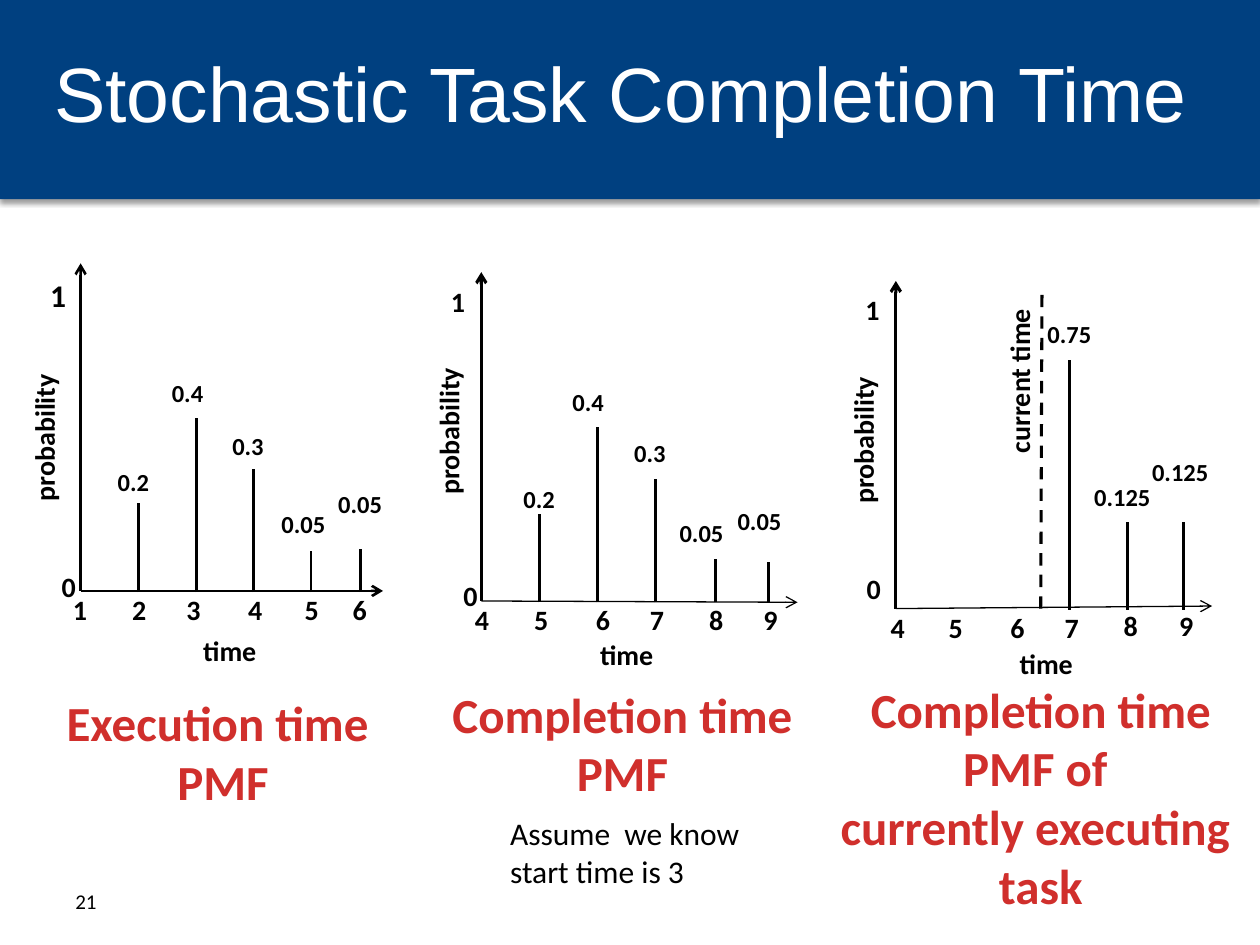
from dataclasses import dataclass

from lxml import etree
from pptx import Presentation
from pptx import util as u
from pptx.dml.color import RGBColor
from pptx.enum import dml, shapes, text
from pptx.oxml import ns

BLACK, WHITE, NAVY, RED = "000000", "FFFFFF", "004080", "D02F2C"


@dataclass
class Label:
    text: str
    center: float
    top: float


@dataclass
class Impulse:
    x: float
    top: float
    label: Label


@dataclass
class Pmf:
    origin: tuple[float, float]
    time_tip: tuple[float, float]
    probability_tip: float
    time_axis_width: float
    line_width: float
    one_size: int
    ticks: list[Label]
    impulses: list[Impulse]
    time: Label
    one: Label
    zero: Label
    probability: Label


def ticks(first: int, top: float, centers: list[float]) -> list[Label]:
    return [Label(str(n), center, top) for n, center in enumerate(centers, first)]


def color(value: str) -> RGBColor:
    return RGBColor.from_string(value)


def format_runs(frame, size: float, fill: str, font: str = "Calibri", bold: bool = False):
    for paragraph in frame.paragraphs:
        for run in paragraph.runs:
            run.font.size, run.font.name, run.font.bold = u.Pt(size), font, bold
            run.font.color.rgb = color(fill)


def add_text(slide, content: str, left: float, top: float, width: float, height: float,
             size: float, fill: str = BLACK, bold: bool = True, centered: bool = False):
    shape = slide.shapes.add_textbox(*map(u.Inches, (left, top, width, height)))
    frame = shape.text_frame
    frame.word_wrap = False
    frame.auto_size = text.MSO_AUTO_SIZE.SHAPE_TO_FIT_TEXT
    paragraph = frame.paragraphs[0]
    paragraph.text = content
    paragraph.alignment = text.PP_ALIGN.CENTER if centered else text.PP_ALIGN.LEFT
    format_runs(frame, size, fill, bold=bold)
    return shape


def add_label(slide, label: Label, width: float, size: int = 16, rotation: int = 0):
    height = {14: 0.34, 16: 0.37, 18: 0.4}[size]
    shape = add_text(slide, label.text, label.center - width / 2, label.top,
                     width, height, size)
    shape.rotation = rotation


def add_line(slide, start: tuple[float, float], end: tuple[float, float], width: float,
             arrow: bool = False, dashed: bool = False):
    line = slide.shapes.add_connector(
        shapes.MSO_CONNECTOR.STRAIGHT, *map(u.Inches, (*start, *end)))
    line.line.color.rgb = color(BLACK)
    line.line.width = u.Pt(width)
    if dashed:
        line.line.dash_style = dml.MSO_LINE.DASH
    if arrow:
        etree.SubElement(line.line._get_or_add_ln(), ns.qn("a:tailEnd"), type="arrow")
    etree.SubElement(line.element.spPr, ns.qn("a:effectLst"))


def add_pmf(slide, pmf: Pmf):
    x, base = pmf.origin
    add_line(slide, pmf.origin, pmf.time_tip, pmf.time_axis_width, arrow=True)
    add_line(slide, pmf.origin, (x, pmf.probability_tip), pmf.line_width, arrow=True)
    for impulse in pmf.impulses:
        add_line(slide, (impulse.x, base + 0.01), (impulse.x, impulse.top), pmf.line_width)
        add_label(slide, impulse.label, 0.15 + 0.1 * len(impulse.label.text), 14)
    for tick in pmf.ticks:
        add_label(slide, tick, 0.32)
    add_label(slide, pmf.time, 0.63)
    add_label(slide, pmf.one, 0.32, pmf.one_size)
    add_label(slide, pmf.zero, 0.32)
    add_label(slide, pmf.probability, 1.22, rotation=270)


def add_band(slide):
    band = slide.shapes.add_shape(
        shapes.MSO_SHAPE.RECTANGLE, 0, 0, u.Inches(10), u.Inches(1.58))
    band.shadow.inherit = False
    band.fill.solid()
    band.fill.fore_color.rgb = color(NAVY)
    band.line.fill.background()
    effects = band.element.spPr.find(ns.qn("a:effectLst"))
    shadow = etree.SubElement(effects, ns.qn("a:outerShdw"), blurRad=str(u.Pt(3.1)),
                              dist=str(u.Pt(1.6)), dir="5400000", rotWithShape="0")
    tint = etree.SubElement(shadow, ns.qn("a:srgbClr"), val=BLACK)
    etree.SubElement(tint, ns.qn("a:alpha"), val="38000")


def set_title(slide, content: str):
    title = slide.shapes.title
    title.left, title.top, title.width, title.height = map(
        u.Inches, (0.33, 0.33, 9.67, 0.8))
    frame = title.text_frame
    frame.text = content
    frame.auto_size = text.MSO_AUTO_SIZE.NONE
    frame.vertical_anchor = text.MSO_ANCHOR.MIDDLE
    frame.paragraphs[0].alignment = text.PP_ALIGN.LEFT
    format_runs(frame, 44, WHITE, "Arial")
    title.element.getparent().append(title.element)  # in front of the band


EXECUTION = Pmf(
    (0.64, 4.69), (3.04, 4.69), 2.09, 1.5, 1.5, 18,
    ticks(1, 4.65, [0.64, 1.11, 1.54, 2.03, 2.48, 2.86]),
    [Impulse(1.1, 3.99, Label("0.2", 1.06, 3.66)),
     Impulse(1.56, 3.32, Label("0.4", 1.49, 2.95)),
     Impulse(2.01, 3.72, Label("0.3", 1.97, 3.37)),
     Impulse(2.47, 4.37, Label("0.05", 2.41, 3.99)),
     Impulse(2.86, 4.36, Label("0.05", 2.86, 3.83))],
    Label("time", 1.83, 4.98), Label("1", 0.46, 2.14),
    Label("0", 0.55, 4.47), Label("probability", 0.35, 3.28))

COMPLETION = Pmf(
    (3.82, 4.77), (6.33, 4.78), 2.16, 0.75, 1.75, 16,
    ticks(4, 4.73, [3.83, 4.3, 4.79, 5.22, 5.69, 6.12]),
    [Impulse(4.28, 4.08, Label("0.2", 4.28, 3.79)),
     Impulse(4.74, 3.39, Label("0.4", 4.67, 3.02)),
     Impulse(5.2, 3.8, Label("0.3", 5.16, 3.43)),
     Impulse(5.68, 4.44, Label("0.05", 5.57, 4.06)),
     Impulse(6.1, 4.46, Label("0.05", 6.03, 3.97))],
    Label("time", 4.98, 5.01), Label("1", 3.64, 2.21),
    Label("0", 3.74, 4.54), Label("probability", 3.56, 3.23))

EXECUTING = Pmf(
    (7.11, 4.83), (9.62, 4.81), 2.23, 0.75, 1.75, 16,
    ticks(4, 4.8, [7.13, 7.59, 8.08, 8.51]) + ticks(8, 4.78, [8.98, 9.42]),
    [Impulse(8.49, 2.86, Label("0.75", 8.49, 2.48)),
     Impulse(8.95, 4.14, Label("0.125", 8.91, 3.78)),
     Impulse(9.39, 4.14, Label("0.125", 9.37, 3.58))],
    Label("time", 8.31, 5.08), Label("1", 6.93, 2.27),
    Label("0", 6.94, 4.49), Label("probability", 6.85, 3.3))

# Caption text with left, top, width, height
CAPTIONS = [
    ("Execution time \nPMF", 0.41, 5.45, 2.72, 1.04),
    ("Completion time\nPMF", 3.47, 5.38, 2.94, 1.04),
    ("Completion time\nPMF of \ncurrently executing \ntask", 6.55, 5.34, 3.42, 1.99),
]


def main():
    presentation = Presentation()
    presentation.slide_width, presentation.slide_height = u.Inches(10), u.Inches(7.5)
    slide = presentation.slides.add_slide(presentation.slide_layouts[5])

    # Header
    add_band(slide)
    set_title(slide, "Stochastic Task Completion Time")

    # Three probability mass functions
    for pmf in (EXECUTION, COMPLETION, EXECUTING):
        add_pmf(slide, pmf)
    add_line(slide, (8.26, 4.83), (8.27, 2.33), 1.75, dashed=True)
    add_label(slide, Label("current time", 8.09, 2.83), 1.36, rotation=270)

    # Captions, remark and slide number
    for content, *box in CAPTIONS:
        add_text(slide, content, *box, size=28, fill=RED, centered=True)
    add_text(slide, "Assume  we know \nstart time is 3", 3.95, 6.41, 2.1, 0.71, 18, bold=False)
    number = add_text(slide, "21", 0.5, 6.95, 2.33, 0.4, 12, bold=False)
    number.text_frame.auto_size = text.MSO_AUTO_SIZE.NONE
    number.text_frame.word_wrap = True
    number.text_frame.vertical_anchor = text.MSO_ANCHOR.MIDDLE

    presentation.save("out.pptx")


if __name__ == "__main__":
    main()
